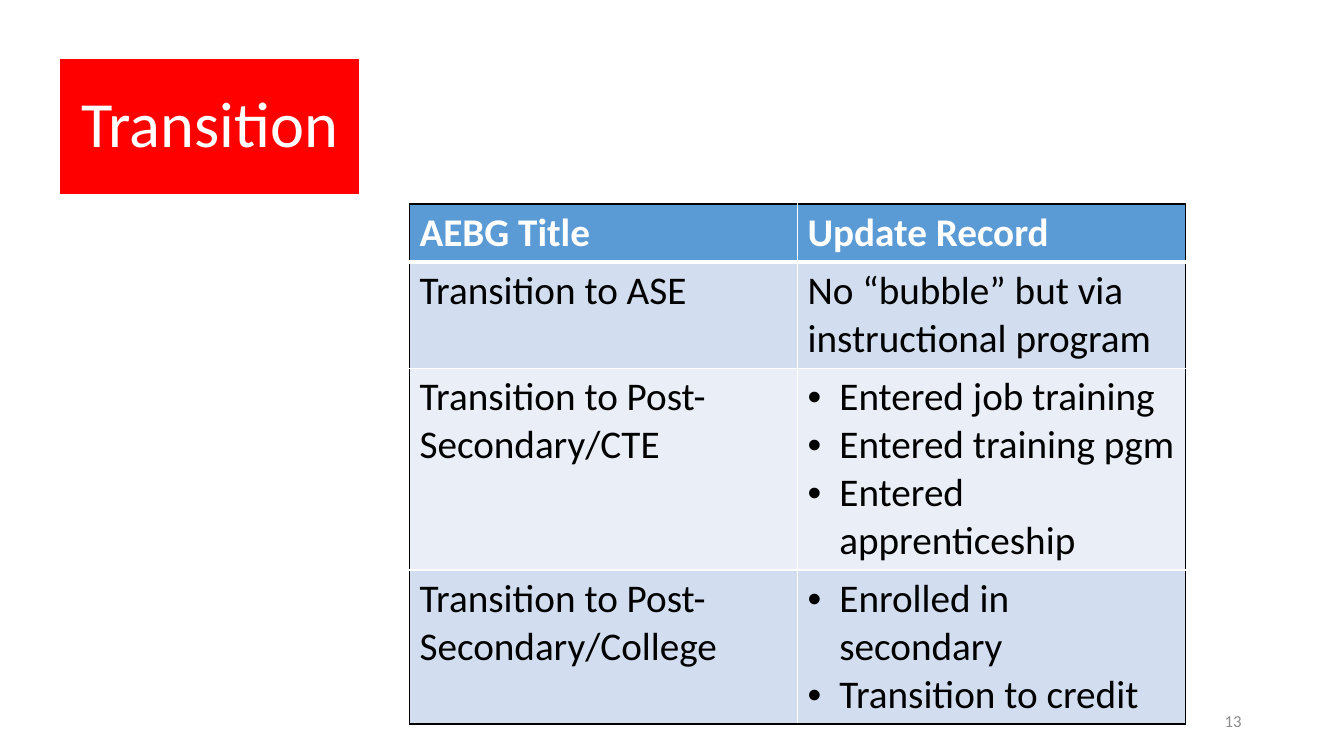
from lxml import etree
from pptx import Presentation
from pptx.dml.color import RGBColor
from pptx.enum.shapes import MSO_SHAPE
from pptx.enum.text import MSO_ANCHOR, PP_ALIGN
from pptx.oxml.ns import qn
from pptx.util import Cm, Pt

RECTANGLE = MSO_SHAPE.RECTANGLE
MIDDLE = MSO_ANCHOR.MIDDLE
CENTER, LEFT, RIGHT = PP_ALIGN.CENTER, PP_ALIGN.LEFT, PP_ALIGN.RIGHT

RED = RGBColor(0xFF, 0x00, 0x00)
WHITE = RGBColor(0xFF, 0xFF, 0xFF)
BLACK = RGBColor(0x00, 0x00, 0x00)
GRAY = RGBColor(0x8C, 0x8C, 0x8C)
HEADER_BLUE = RGBColor(0x5B, 0x9B, 0xD5)
BAND_DARK = RGBColor(0xD2, 0xDE, 0xEF)
BAND_LIGHT = RGBColor(0xEA, 0xEF, 0xF7)

FONT = "Calibri"
BULLET_INDENT = Cm(0.8)
COLUMN_WIDTH = Cm(9.78)
ROW_HEIGHTS = [1.45, 2.68, 5.08, 3.88]
RECORDS = [
    (["AEBG Title"], ["Update Record"]),
    (["Transition to ASE"], ["No “bubble” but via instructional program"]),
    (["Transition to Post-Secondary/CTE"],
     ["Entered job training", "Entered training pgm", "Entered apprenticeship"]),
    (["Transition to Post-Secondary/College"],
     ["Enrolled in secondary", "Transition to credit"]),
]


def apply_format(target, values):
    for name, value in values.items():
        setattr(target, name, value)


def write_paragraph(paragraph, text, size, color, align=LEFT, bold=False):
    paragraph.alignment = align
    run = paragraph.add_run()
    run.text = text
    apply_format(run.font, {"name": FONT, "size": Pt(size), "bold": bold})
    run.font.color.rgb = color


def add_bullet(paragraph):
    properties = paragraph._p.get_or_add_pPr()
    properties.set("marL", str(BULLET_INDENT))
    properties.set("indent", str(-BULLET_INDENT))
    etree.SubElement(properties, qn("a:buFont"), typeface="Arial")
    etree.SubElement(properties, qn("a:buChar"), char="•")


def add_border(cell, side, color, width):
    line = etree.SubElement(cell._tc.get_or_add_tcPr(), qn(f"a:ln{side}"), w=str(Pt(width)))
    fill = etree.SubElement(line, qn("a:solidFill"))
    etree.SubElement(fill, qn("a:srgbClr"), val=str(color))


def style_cell(cell, row, column):
    last_row = len(RECORDS) - 1
    borders = {
        "L": (BLACK if column == 0 else WHITE, 1),
        "R": (BLACK if column == 1 else WHITE, 1),
        "T": (BLACK if row == 0 else WHITE, 3 if row == 1 else 1),
        "B": (BLACK if row == last_row else WHITE, 3 if row == 0 else 1),
    }
    for side, (color, width) in borders.items():
        add_border(cell, side, color, width)
    cell.fill.solid()
    band = BAND_DARK if row % 2 else BAND_LIGHT
    cell.fill.fore_color.rgb = HEADER_BLUE if row == 0 else band


def fill_cell(cell, lines, is_header):
    for index, text in enumerate(lines):
        frame = cell.text_frame
        paragraph = frame.add_paragraph() if index else frame.paragraphs[0]
        write_paragraph(paragraph, text, 28, WHITE if is_header else BLACK, bold=is_header)
        if len(lines) > 1:
            add_bullet(paragraph)


def add_title_block(slide):
    block = slide.shapes.add_shape(RECTANGLE, Cm(1.5), Cm(1.47), Cm(7.57), Cm(3.45))
    block.shadow.inherit = False
    block.fill.solid()
    block.fill.fore_color.rgb = RED
    block.line.color.rgb = WHITE
    block.line.width = Pt(1)
    inset = Cm(0.48)
    apply_format(block.text_frame, {
        "word_wrap": True, "vertical_anchor": MIDDLE,
        "margin_left": inset, "margin_right": inset,
        "margin_top": inset, "margin_bottom": inset,
    })
    title = block.text_frame.paragraphs[0]
    title.line_spacing = 0.9
    write_paragraph(title, "Transition", 46, WHITE, CENTER)


def add_records_table(slide):
    records = slide.shapes.add_table(
        len(RECORDS), 2, Cm(10.32), Cm(5.14), 2 * COLUMN_WIDTH, Cm(sum(ROW_HEIGHTS))).table
    for column in records.columns:
        column.width = COLUMN_WIDTH
    for row, (height, record) in enumerate(zip(ROW_HEIGHTS, RECORDS)):
        records.rows[row].height = Cm(height)
        for column, lines in enumerate(record):
            cell = records.cell(row, column)
            style_cell(cell, row, column)
            fill_cell(cell, lines, row == 0)


def add_page_number(slide):
    frame = slide.shapes.add_textbox(Cm(23.92), Cm(17.65), Cm(7.62), Cm(1.01)).text_frame
    apply_format(frame, {"word_wrap": True, "vertical_anchor": MIDDLE})
    write_paragraph(frame.paragraphs[0], "13", 12, GRAY, RIGHT)


def main():
    deck = Presentation()
    apply_format(deck, {"slide_width": Cm(33.87), "slide_height": Cm(19.05)})
    slide = deck.slides.add_slide(deck.slide_layouts[6])
    add_title_block(slide)
    add_records_table(slide)
    add_page_number(slide)
    deck.save("out.pptx")


if __name__ == "__main__":
    main()
